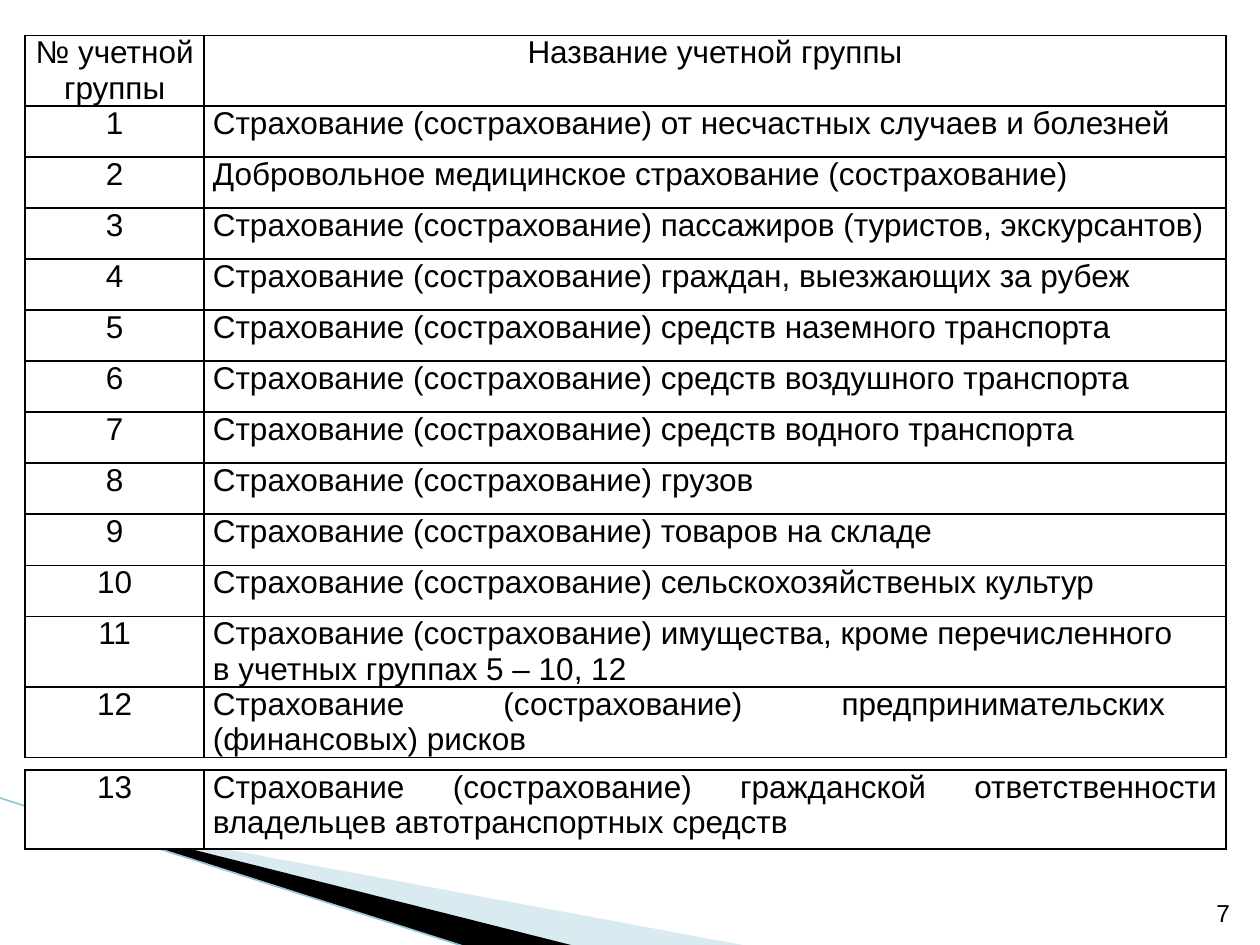
from lxml import etree
from pptx import Presentation
from pptx.dml.color import RGBColor
from pptx.enum.shapes import MSO_CONNECTOR
from pptx.enum.text import MSO_ANCHOR, PP_ALIGN
from pptx.oxml import parse_xml
from pptx.oxml.ns import nsdecls, qn
from pptx.util import Inches, Pt

COLORS = {"black": "000000", "white": "FFFFFF", "pale": "A0CBDC", "edge": "97C5D8"}
FONT = "Arial"
INSURANCE = "Страхование (сострахование) "

HEADER = ("№ учетной группы", "Название учетной группы")
GROUPS = [
    INSURANCE + "от несчастных случаев и болезней",
    "Добровольное медицинское страхование (сострахование)",
    INSURANCE + "пассажиров (туристов, экскурсантов)",
    INSURANCE + "граждан, выезжающих за рубеж",
    INSURANCE + "средств наземного транспорта",
    INSURANCE + "средств воздушного транспорта",
    INSURANCE + "средств водного транспорта",
    INSURANCE + "грузов",
    INSURANCE + "товаров на складе",
    INSURANCE + "сельскохозяйственых культур",
    INSURANCE + "имущества, кроме перечисленного\nв учетных группах 5 – 10, 12",
    INSURANCE + "предпринимательских (финансовых) рисков",
    INSURANCE + "гражданской ответственности владельцев автотранспортных средств",
]


def add_text(tf, text, size, align):
    for i, line in enumerate(text.split("\n")):
        p = tf.paragraphs[0] if i == 0 else tf.add_paragraph()
        p.alignment = align
        r = p.add_run()
        r.text = line
        r.font.name = FONT
        r.font.size = Pt(size)
        r.font.color.rgb = RGBColor.from_string(COLORS["black"])


def add_group_table(slide, rows, top, row_height):
    table = slide.shapes.add_table(len(rows), 2, Inches(0.2), Inches(top),
                                   Inches(9.53), Inches(row_height * len(rows))).table
    table.first_row = table.horz_banding = False
    for column, width in zip(table.columns, (1.42, 8.11)):
        column.width = Inches(width)
    for i, row in enumerate(rows):
        table.rows[i].height = Inches(row_height)
        for j, text in enumerate(row):
            cell = table.cell(i, j)
            cell.margin_left = cell.margin_right = Inches(0.07)
            cell.margin_top = cell.margin_bottom = 0
            centred = j == 0 or row == HEADER
            add_text(cell.text_frame, text, 18,
                     PP_ALIGN.CENTER if centred else PP_ALIGN.JUSTIFY)
            cell.fill.solid()
            cell.fill.fore_color.rgb = RGBColor.from_string(COLORS["white"])
            # Borders come before the fill in the cell properties
            for k, side in enumerate(("lnL", "lnR", "lnT", "lnB")):
                cell._tc.get_or_add_tcPr().insert(k, parse_xml(
                    f'<a:{side} {nsdecls("a")} w="12700"><a:solidFill>'
                    f'<a:srgbClr val="{COLORS["black"]}"/></a:solidFill></a:{side}>'))
    return table


prs = Presentation()
prs.slide_width, prs.slide_height = Inches(10), Inches(7.5)
s = prs.slides.add_slide(prs.slide_layouts[6])

# Decorative wedges in the lower left corner: colour, opacity in percent, outline
WEDGES = [
    ("pale", 40, [(0.55, 6.51), (5.95, 7.51), (4.56, 7.51), (0.55, 6.5)]),
    ("black", 100, [(0.53, 6.49), (4.57, 7.51), (3.72, 7.52), (0.54, 6.5)]),
]
for color, opacity, outline in WEDGES:
    points = [(Inches(x), Inches(y)) for x, y in outline]
    builder = s.shapes.build_freeform(*points[0])
    builder.add_line_segments(points[1:], close=True)
    sp = builder.convert_to_shape()
    sp.shadow.inherit = False
    sp.line.fill.background()
    sp.fill.solid()
    sp.fill.fore_color.rgb = RGBColor.from_string(COLORS[color])
    if opacity < 100:
        clr = sp._element.spPr.find(".//" + qn("a:srgbClr"))
        etree.SubElement(clr, qn("a:alpha")).set("val", str(opacity * 1000))

# Thin line along the wedges
line = s.shapes.add_connector(MSO_CONNECTOR.STRAIGHT, Inches(-0.01), Inches(6.33),
                              Inches(3.71), Inches(7.52))
line.line.color.rgb = RGBColor.from_string(COLORS["edge"])
line.line.width = Pt(0.95)
etree.SubElement(line._element.spPr, qn("a:effectLst"))

# Tables: groups 1 to 12, then group 13 on its own
numbered = [(str(n), name) for n, name in enumerate(GROUPS, 1)]
main = add_group_table(s, [HEADER] + numbered[:12], 0.28, 5.27 / 13)
main.cell(12, 1).margin_right = Inches(0.48)  # wraps before the bracket
add_group_table(s, numbered[12:], 6.11, 0.63)

# Slide number
sp = s.shapes.add_textbox(Inches(9.46), Inches(7.01), Inches(0.4), Inches(0.4))
tf = sp.text_frame
tf.word_wrap = True
tf.vertical_anchor = MSO_ANCHOR.BOTTOM
add_text(tf, "7", 14, PP_ALIGN.RIGHT)

prs.save("out.pptx")
